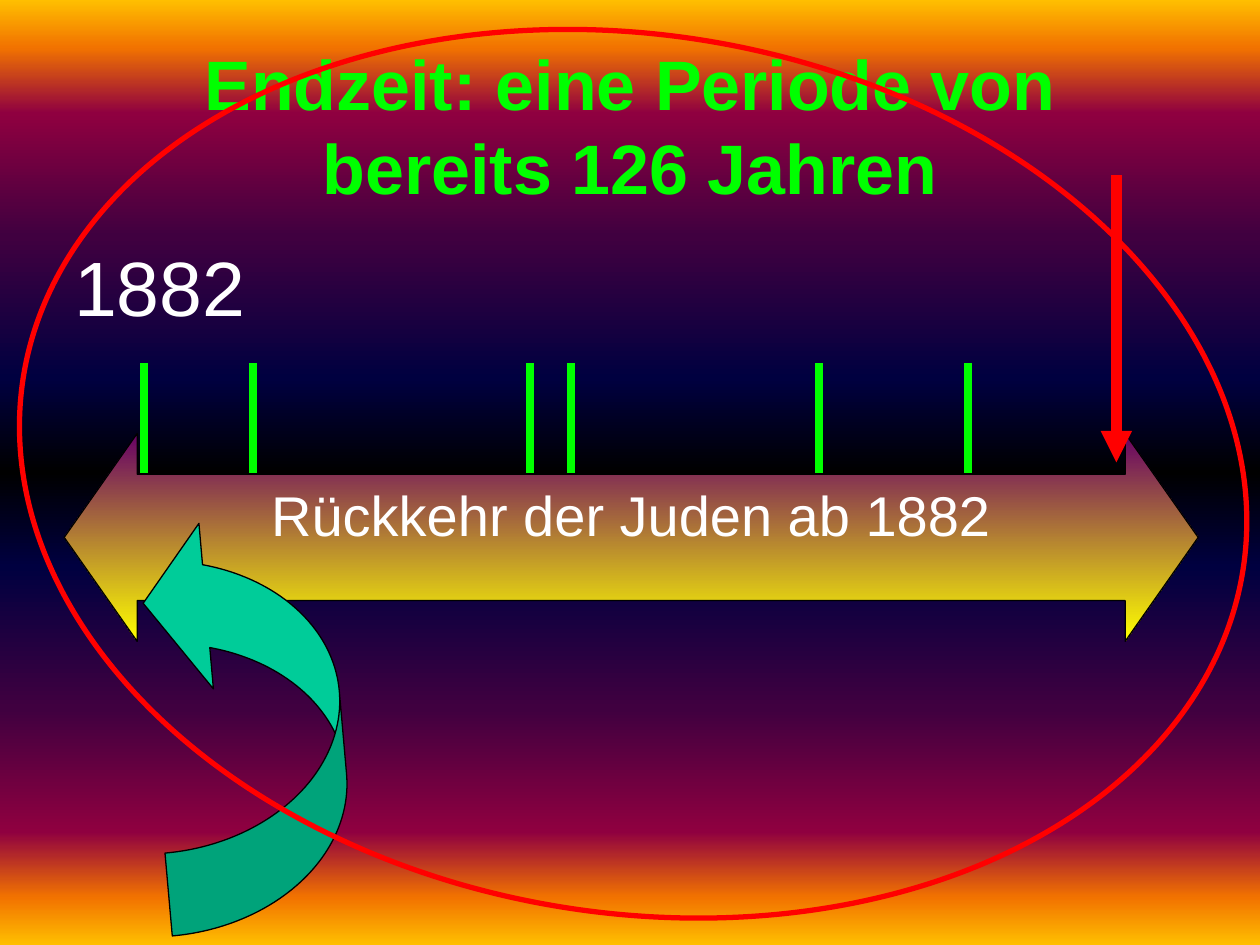
import lxml.etree
import pptx
import pptx.dml.color
import pptx.enum.shapes
import pptx.enum.text
import pptx.oxml.ns
import pptx.util

Inches = pptx.util.Inches
Pt = pptx.util.Pt
qn = pptx.oxml.ns.qn
Shape = pptx.enum.shapes.MSO_SHAPE
Anchor = pptx.enum.text.MSO_ANCHOR
Align = pptx.enum.text.PP_ALIGN

COLORS = {
    "title": "00FF00",
    "tick": "00FF00",
    "text": "FFFFFF",
    "marker": "FF0000",
    "return_arrow": "00CC99",
    "outline": "000000",
}
HALF_SKY = [(0, "FFBF00"), (5, "F27300"), (12, "8F0040"), (25, "400040"), (40, "000040")]
SKY = HALF_SKY + [(50, "000000")] + [(100 - position, color) for position, color in reversed(HALF_SKY)]
TIMELINE = [(0, "660066"), (100, "FFFF00")]
TICKS = [1.14, 2.01, 4.21, 4.53, 6.5, 7.68]


def rgb(name):
    return pptx.dml.color.RGBColor.from_string(COLORS[name])


def apply_format(target, values):
    for name, value in values.items():
        setattr(target, name, value)


class SlideBuilder:
    def __init__(self, slide, font="Arial"):
        self.slide = slide
        self.font = font

    def gradient(self, fill, element, stops):
        fill.gradient()
        fill.gradient_angle = 270
        stop_list = element.find(".//" + qn("a:gsLst"))
        for stop in list(stop_list):
            stop_list.remove(stop)
        for position, color in stops:
            stop = lxml.etree.SubElement(stop_list, qn("a:gs"), pos=str(position * 1000))
            lxml.etree.SubElement(stop, qn("a:srgbClr"), val=color)

    def background(self, stops):
        self.gradient(self.slide.background.fill, self.slide.element, stops)

    def label(self, shape, text, size, color, align, frame_format, bold=False):
        frame = shape.text_frame
        apply_format(frame, frame_format)
        paragraph = frame.paragraphs[0]
        paragraph.alignment = align
        run = paragraph.add_run()
        run.text = text
        apply_format(run.font, {"name": self.font, "size": Pt(size), "bold": bold})
        run.font.color.rgb = rgb(color)

    def text(self, box, *style, **options):
        shape = self.slide.shapes.add_textbox(*map(Inches, box))
        self.label(shape, *style, **options)

    def shape(self, kind, box, line, width, fill=None, stops=None, adjustments=(), rotation=0):
        shape = self.slide.shapes.add_shape(kind, *map(Inches, box))
        shape.shadow.inherit = False
        shape.rotation = rotation
        for index, value in enumerate(adjustments):
            shape.adjustments[index] = value
        if stops:
            self.gradient(shape.fill, shape.element, stops)
        elif fill:
            shape.fill.solid()
            shape.fill.fore_color.rgb = rgb(fill)
        else:
            shape.fill.background()
        shape.line.color.rgb = rgb(line)
        shape.line.width = Pt(width)
        return shape

    def vertical_line(self, x, top, bottom, color, width, arrow=False):
        connector = self.slide.shapes.add_connector(
            pptx.enum.shapes.MSO_CONNECTOR.STRAIGHT,
            Inches(x), Inches(top), Inches(x), Inches(bottom))
        connector.line.color.rgb = rgb(color)
        connector.line.width = Pt(width)
        properties = connector.element.spPr
        if arrow:
            lxml.etree.SubElement(properties.find(qn("a:ln")), qn("a:tailEnd"), type="triangle")
        lxml.etree.SubElement(properties, qn("a:effectLst"))


def main():
    presentation = pptx.Presentation()
    apply_format(presentation, {"slide_width": Inches(10), "slide_height": Inches(7.5)})
    slide = presentation.slides.add_slide(presentation.slide_layouts[6])
    builder = SlideBuilder(slide)
    builder.background(SKY)

    builder.text((0.75, 0.21, 8.5, 1.55), "Endzeit: eine Periode von bereits 126 Jahren",
                 40, "title", Align.CENTER,
                 {"word_wrap": True, "vertical_anchor": Anchor.MIDDLE}, bold=True)

    timeline = builder.shape(Shape.LEFT_RIGHT_ARROW, (0.51, 3.44, 9, 1.65), "outline", 0.75,
                             stops=TIMELINE, adjustments=(0.608, 0.351))
    builder.label(timeline, "Rückkehr der Juden ab 1882", 32, "text", Align.CENTER,
                  {"word_wrap": True, "vertical_anchor": Anchor.TOP})

    return_arrow = builder.shape(Shape.CURVED_LEFT_ARROW, (1.22, 4.06, 1.49, 3.31), "outline", 0.75,
                                 fill="return_arrow", adjustments=(0.443, 0.885, 0.333), rotation=355)
    return_arrow.element.spPr.xfrm.set("flipV", "1")

    builder.vertical_line(8.86, 1.39, 3.67, "marker", 6, arrow=True)
    for x in TICKS:
        builder.vertical_line(x, 2.88, 3.75, "tick", 4.5)

    builder.text((0.49, 1.85, 1.56, 0.83), "1882", 44, "text", Align.LEFT,
                 {"word_wrap": False, "auto_size": pptx.enum.text.MSO_AUTO_SIZE.SHAPE_TO_FIT_TEXT})
    builder.shape(Shape.OVAL, (1.54, -1.14, 6.97, 9.8), "marker", 3, rotation=279)

    presentation.save("out.pptx")


if __name__ == "__main__":
    main()
